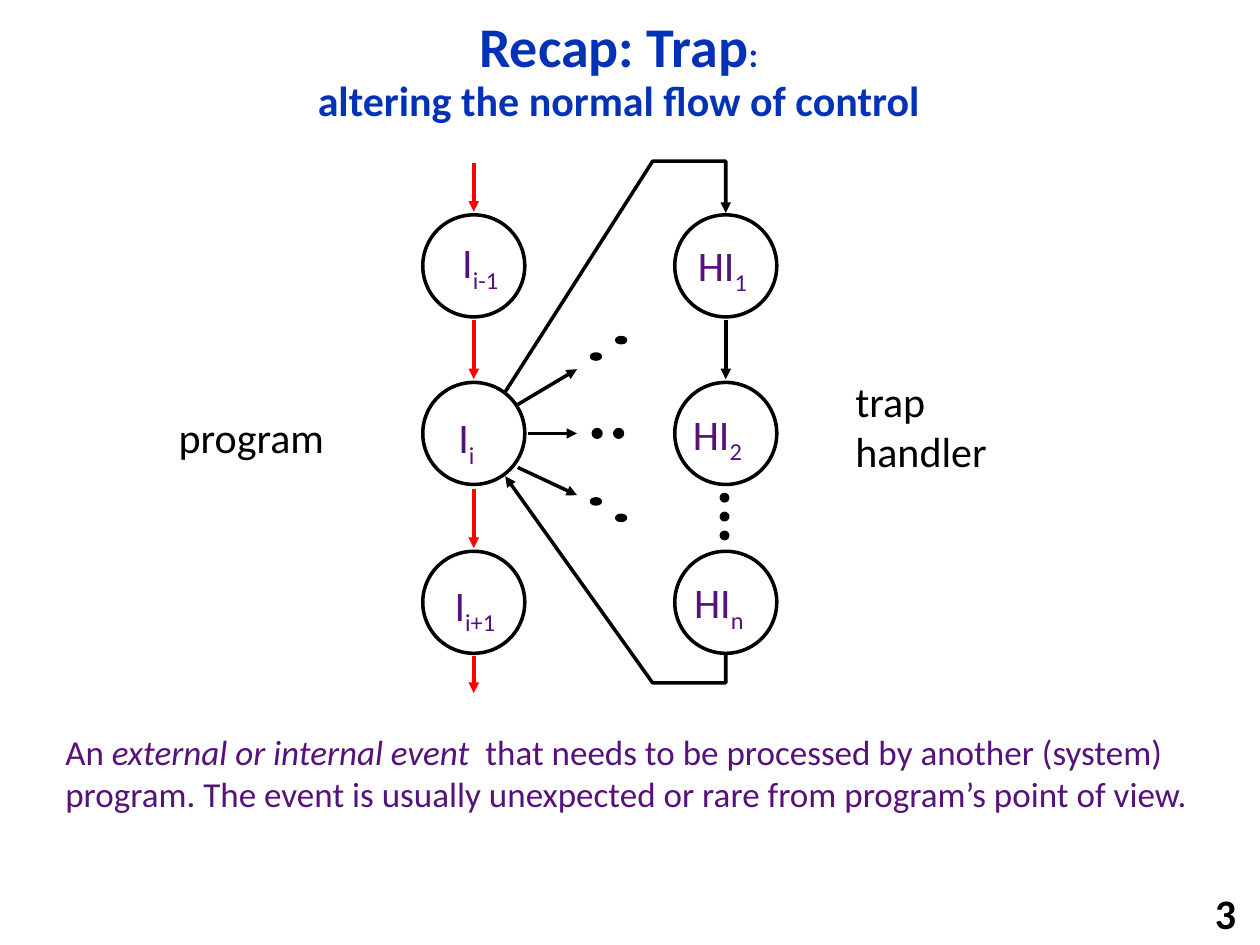
from dataclasses import dataclass

from lxml import etree
from pptx import Presentation
from pptx.dml.color import RGBColor
from pptx.enum.shapes import MSO_CONNECTOR, MSO_SHAPE
from pptx.enum.text import MSO_ANCHOR, MSO_AUTO_SIZE, PP_ALIGN
from pptx.oxml.ns import qn
from pptx.util import Inches, Pt

OVAL, STRAIGHT = MSO_SHAPE.OVAL, MSO_CONNECTOR.STRAIGHT
LEFT, CENTER, RIGHT = PP_ALIGN.LEFT, PP_ALIGN.CENTER, PP_ALIGN.RIGHT
TOP, MIDDLE = MSO_ANCHOR.TOP, MSO_ANCHOR.MIDDLE

BLACK = RGBColor(0x00, 0x00, 0x00)
WHITE = RGBColor(0xFF, 0xFF, 0xFF)
RED = RGBColor(0xFF, 0x00, 0x00)
BLUE = RGBColor(0x03, 0x32, 0xB7)
PURPLE = RGBColor(0x56, 0x12, 0x7A)

FONT = "Calibri"
LINE_WIDTH = Pt(2)
NODE_SIZE = 0.81
PROGRAM_X, HANDLER_X = 3.76, 5.76
ROWS = [2.11, 3.44, 4.78]

Point = tuple[float, float]


@dataclass
class Span:
    text: str
    size: float | None = None
    italic: bool = False
    subscript: bool = False


@dataclass
class Node:
    center: Point
    name: str
    index: str
    label: tuple[float, float, float]
    fill: RGBColor | None = None


@dataclass
class Arrow:
    start: Point
    end: Point
    color: RGBColor = BLACK


@dataclass
class Dot:
    center: Point
    width: float
    height: float


def add_text(page, at, paragraphs: list[list[Span]], *, size=24, color=BLACK,
             bold=False, align=LEFT, anchor=TOP, wrap=False, spacing=None,
             grow=True) -> None:
    box = page.shapes.add_textbox(*map(Inches, at))
    frame = box.text_frame
    frame.word_wrap = wrap
    frame.vertical_anchor = anchor
    frame.auto_size = MSO_AUTO_SIZE.SHAPE_TO_FIT_TEXT if grow else MSO_AUTO_SIZE.NONE
    for number, spans in enumerate(paragraphs):
        para = frame.add_paragraph() if number else frame.paragraphs[0]
        para.alignment = align
        if spacing:
            para.line_spacing = spacing
        for span in spans:
            if span.text == "\n":
                para.add_line_break()
                continue
            run = para.add_run()
            run.text = span.text
            run.font.name = FONT
            run.font.size = Pt(span.size or size)
            run.font.bold = bold
            run.font.italic = span.italic
            run.font.color.rgb = color
            if span.subscript:
                run._r.get_or_add_rPr().set("baseline", "-25000")


def style_line(line, color: RGBColor, arrow: bool = False) -> None:
    line.width = LINE_WIDTH
    line.color.rgb = color
    if arrow:
        tail = etree.SubElement(line._get_or_add_ln(), qn("a:tailEnd"))
        tail.set("type", "triangle")


def add_oval(page, center: Point, width: float, height: float,
             fill: RGBColor | None) -> None:
    x, y = center
    oval = page.shapes.add_shape(OVAL, Inches(x - width / 2), Inches(y - height / 2),
                                 Inches(width), Inches(height))
    oval.shadow.inherit = False
    if fill is None:
        oval.fill.background()
    else:
        oval.fill.solid()
        oval.fill.fore_color.rgb = fill
    style_line(oval.line, BLACK)


def add_node(page, node: Node) -> None:
    add_oval(page, node.center, NODE_SIZE, NODE_SIZE, node.fill)
    left, top, width = node.label
    add_text(page, (left, top, width, 0.5),
             [[Span(node.name), Span(node.index, subscript=True)]], color=PURPLE)


def add_arrow(page, arrow: Arrow) -> None:
    connector = page.shapes.add_connector(STRAIGHT, *map(Inches, arrow.start + arrow.end))
    etree.SubElement(connector._element.spPr, qn("a:effectLst"))
    # The line properties must come before the effect list
    style_line(connector.line, arrow.color, arrow=True)


def add_route(page, points: list[Point]) -> None:
    start, *rest = [(Inches(x), Inches(y)) for x, y in points]
    builder = page.shapes.build_freeform(*start, scale=1.0)
    builder.add_line_segments(rest, close=False)
    route = builder.convert_to_shape()
    route.shadow.inherit = False
    route.fill.background()
    style_line(route.line, BLACK, arrow=True)


NODES = [
    Node((PROGRAM_X, ROWS[0]), "I", "i-1", (3.57, 1.83, 0.52)),
    Node((PROGRAM_X, ROWS[1]), "I", "i", (3.54, 3.22, 0.34)),
    Node((PROGRAM_X, ROWS[2]), "I", "i+1", (3.51, 4.55, 0.56)),
    Node((HANDLER_X, ROWS[0]), "HI", "1", (5.44, 1.85, 0.61)),
    Node((HANDLER_X, ROWS[1]), "HI", "2", (5.4, 3.19, 0.61)),
    Node((HANDLER_X, ROWS[2]), "HI", "n", (5.41, 4.53, 0.61), WHITE),
]

PROGRAM_FLOW = [(1.29, 1.68), (2.54, 3.01), (3.88, 4.35), (5.21, 5.5)]
ARROWS = [Arrow((PROGRAM_X, top), (PROGRAM_X, bottom), RED)
          for top, bottom in PROGRAM_FLOW]
ARROWS += [
    Arrow((HANDLER_X, 2.54), (HANDLER_X, 3.01)),
    Arrow((4.11, 3.21), (4.58, 2.93)),
    Arrow((4.19, 3.44), (4.58, 3.44)),
    Arrow((4.11, 3.71), (4.58, 3.93)),
]

TRAP_ROUTE = [(4.01, 3.11), (5.18, 1.28), (HANDLER_X, 1.28), (HANDLER_X, 1.69)]
RETURN_ROUTE = [(HANDLER_X, 5.04), (HANDLER_X, 5.42), (5.18, 5.42), (4.01, 3.78)]

DOTS = [Dot(center, 0.07, 0.04)
        for center in [(4.73, 2.83), (4.93, 2.7), (4.73, 3.98), (4.93, 4.11)]]
DOTS += [Dot((x, ROWS[1]), 0.06, 0.06) for x in (4.74, 4.91)]
DOTS += [Dot((5.75, 3.95 + 0.15 * step), 0.05, 0.05) for step in range(3)]


def main() -> None:
    deck = Presentation()
    deck.slide_width, deck.slide_height = Inches(10), Inches(7.5)
    page = deck.slides.add_slide(deck.slide_layouts[6])

    # Title and page number
    add_text(page, (0.92, 0.17, 7.98, 0.81),
             [[Span("Recap: Trap", 32), Span(":", 20), Span("\n"),
               Span("altering the normal flow of control")]],
             color=BLUE, bold=True, align=CENTER, anchor=MIDDLE, wrap=True,
             spacing=0.9, grow=False)
    add_text(page, (7.83, 7.08, 2.08, 0.32), [[Span("3")]], bold=True,
             align=RIGHT, anchor=MIDDLE, wrap=True, grow=False)

    # Flow of control
    for route in (RETURN_ROUTE, TRAP_ROUTE):
        add_route(page, route)
    for node in NODES:
        add_node(page, node)
    for arrow in ARROWS:
        add_arrow(page, arrow)
    for dot in DOTS:
        add_oval(page, dot.center, dot.width, dot.height, BLACK)

    # Captions
    add_text(page, (1.32, 3.22, 1.38, 0.5), [[Span("program")]])
    add_text(page, (6.69, 2.93, 1.26, 0.91), [[Span("trap")], [Span("handler")]])
    add_text(page, (0.42, 5.75, 9.17, 1.1),
             [[Span("An "), Span("external or internal event", italic=True),
               Span("  that needs to be processed by another (system) program. "
                    "The event is usually unexpected or rare from program’s "
                    "point of view.")]],
             size=20, color=PURPLE, wrap=True)

    deck.save("out.pptx")


if __name__ == "__main__":
    main()
